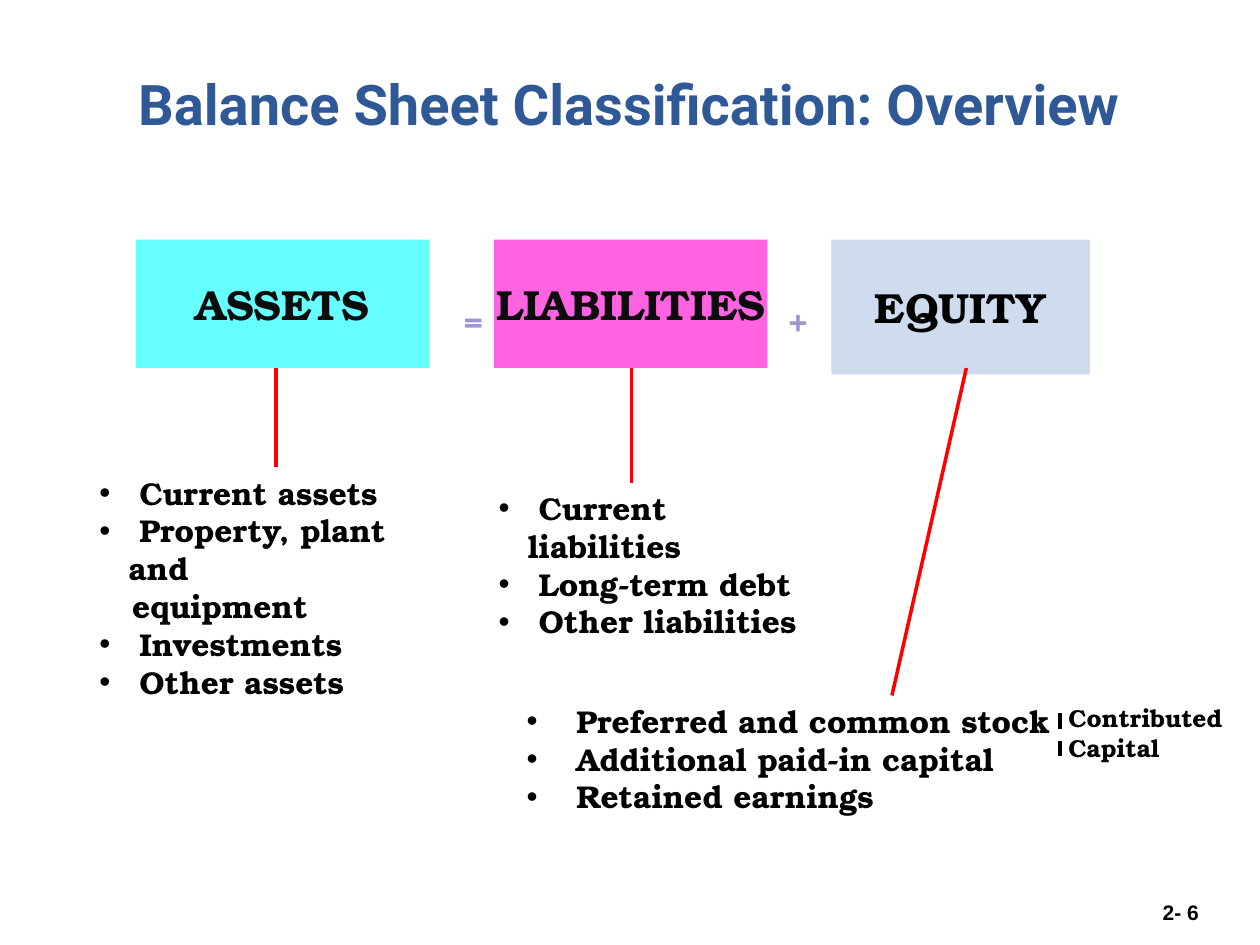
from lxml.etree import SubElement
from pptx import Presentation
from pptx.dml.color import RGBColor
from pptx.enum.dml import MSO_LINE
from pptx.enum.shapes import MSO_CONNECTOR, MSO_SHAPE
from pptx.enum.text import MSO_ANCHOR, MSO_AUTO_SIZE, PP_ALIGN
from pptx.oxml.ns import qn
from pptx.util import Cm, Pt

BLACK = RGBColor(0x00, 0x00, 0x00)
SOFT_BLACK = RGBColor(0x0D, 0x0D, 0x0D)
TITLE_BLUE = RGBColor(0x2F, 0x58, 0x97)
CYAN = RGBColor(0x66, 0xFF, 0xFF)
PINK = RGBColor(0xFF, 0x63, 0xE1)
PALE_BLUE = RGBColor(0xCF, 0xDC, 0xF0)
LILAC = RGBColor(0xA1, 0x93, 0xCF)
RED = RGBColor(0xFF, 0x00, 0x00)
SERIF = "TeX Gyre Bonum"
BOX_TOP = 4.83
BOX_HEIGHT = 2.59
BOX_BOTTOM = BOX_TOP + BOX_HEIGHT


def write_text(paragraph, text, *, size=18, font=SERIF, color=BLACK,
               align=PP_ALIGN.LEFT):
    paragraph.alignment = align
    paragraph.space_before = Pt(0)
    run = paragraph.add_run()
    run.text = text
    run.font.size = Pt(size)
    run.font.name = font
    run.font.bold = True
    run.font.color.rgb = color


def write_lines(frame, lines, **text_format):
    for index, line in enumerate(lines):
        paragraph = frame.add_paragraph() if index else frame.paragraphs[0]
        write_text(paragraph, line, **text_format)


def place(shape, left, top, width, height):
    shape.left, shape.top = Cm(left), Cm(top)
    shape.width, shape.height = Cm(width), Cm(height)


def set_bullet(paragraph, margin, bulleted):
    properties = paragraph._p.get_or_add_pPr()
    properties.set("marL", str(Cm(margin)))
    properties.set("indent", str(Cm(-margin) if bulleted else 0))
    if bulleted:
        SubElement(properties, qn("a:buFont"), typeface="Arial")
        SubElement(properties, qn("a:buChar"), char="•")
    else:
        SubElement(properties, qn("a:buNone"))


def fill_title(title, text):
    place(title, 0.3, 0.84, 24.77, 2.16)
    frame = title.text_frame
    frame.auto_size = MSO_AUTO_SIZE.NONE
    frame.vertical_anchor = MSO_ANCHOR.BOTTOM
    frame.margin_bottom = Cm(0.25)
    write_text(frame.paragraphs[0], text, size=32, font="Roboto",
               color=TITLE_BLUE, align=PP_ALIGN.CENTER)


def fill_list(placeholder, bounds, items, margin=0.59, continuations=()):
    place(placeholder, *bounds)
    frame = placeholder.text_frame
    frame.auto_size = MSO_AUTO_SIZE.NONE
    frame.vertical_anchor = MSO_ANCHOR.TOP
    frame.word_wrap = True
    lines = [item if item in continuations else " " + item for item in items]
    write_lines(frame, lines)
    for paragraph, item in zip(frame.paragraphs, items):
        bulleted = item not in continuations
        set_bullet(paragraph, margin if bulleted else margin + 0.07, bulleted)


def add_box(slide, text, left, width, fill, height=BOX_HEIGHT, color=SOFT_BLACK):
    shape = slide.shapes.add_shape(MSO_SHAPE.RECTANGLE, Cm(left), Cm(BOX_TOP),
                                   Cm(width), Cm(height))
    shape.shadow.inherit = False
    shape.fill.solid()
    shape.fill.fore_color.rgb = fill
    shape.line.fill.background()
    frame = shape.text_frame
    frame.word_wrap = False
    frame.vertical_anchor = MSO_ANCHOR.MIDDLE
    write_text(frame.paragraphs[0], text, size=24, color=color,
               align=PP_ALIGN.CENTER)


def add_label(slide, lines, left, top, width, height, wrap=False, **text_format):
    shape = slide.shapes.add_textbox(Cm(left), Cm(top), Cm(width), Cm(height))
    shape.text_frame.word_wrap = wrap
    write_lines(shape.text_frame, lines, **text_format)


def add_line(slide, start, end, color=RED, width=2, dash=None):
    connector = slide.shapes.add_connector(
        MSO_CONNECTOR.STRAIGHT, *(Cm(value) for value in (*start, *end)))
    connector.line.color.rgb = color
    connector.line.width = Pt(width)
    if dash:
        connector.line.dash_style = dash
    SubElement(connector._element.spPr, qn("a:effectLst"))


def main():
    presentation = Presentation()
    presentation.slide_width, presentation.slide_height = Cm(25.4), Cm(19.05)
    slide = presentation.slides.add_slide(presentation.slide_layouts[4])
    title, assets, liabilities, equity, unused = slide.placeholders
    unused._element.getparent().remove(unused._element)

    fill_title(title, "Balance Sheet Classification: Overview")
    fill_list(assets, (1.75, 9.42, 7.62, 4.09),
              ["Current assets", "Property, plant and", "equipment",
               "Investments", "Other assets"], continuations=("equipment",))
    fill_list(liabilities, (9.8, 9.73, 6.96, 2.57),
              ["Current liabilities", "Long-term debt", "Other liabilities"])
    fill_list(equity, (10.36, 14.02, 11.61, 2.57),
              ["Preferred and common stock", "Additional paid-in capital",
               "Retained earnings"], margin=0.79)

    add_box(slide, "ASSETS", 2.74, 5.92, CYAN)
    add_box(slide, "LIABILITIES", 9.96, 5.51, PINK)
    add_box(slide, "EQUITY", 16.76, 5.21, PALE_BLUE, height=2.72, color=BLACK)
    for sign, left in (("=", 8.69), ("+", 15.24)):
        add_label(slide, [sign], left, 5.92, 1.7, 1.02, wrap=True,
                  color=LILAC, align=PP_ALIGN.CENTER)

    for start, end in (((5.56, BOX_BOTTOM), (5.56, 9.42)),
                       ((12.73, BOX_BOTTOM), (12.73, 9.73)),
                       ((19.48, BOX_BOTTOM), (17.98, 14.02))):
        add_line(slide, start, end)
    add_line(slide, (21.36, 14.38), (21.36, 15.24), color=BLACK, width=2.25,
             dash=MSO_LINE.DASH)
    add_label(slide, ["Contributed", "Capital"], 21.29, 14.05, 3.63, 1.45, size=14)
    add_label(slide, ["2- 6"], 23.19, 18.01, 1.52, 0.76, size=12, font="Arial")
    presentation.save("out.pptx")


if __name__ == "__main__":
    main()
